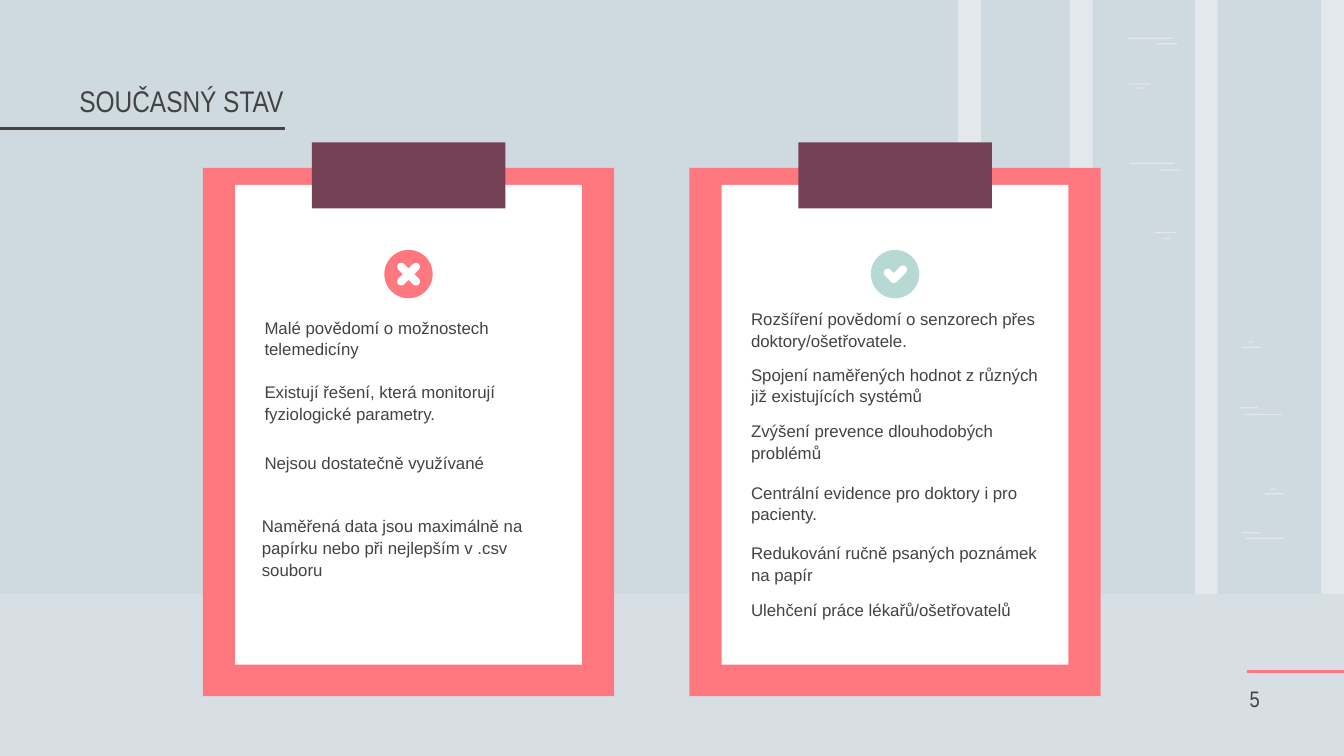
from dataclasses import dataclass
from math import atan2, degrees, hypot

from lxml import etree
from pptx import Presentation
from pptx import util as u
from pptx.dml.color import RGBColor
from pptx.enum import shapes, text
from pptx.oxml.ns import qn

PX = 4572  # EMU per px, 200 px to the inch
COLORS = {
    "sky": "CFD9E0",
    "white": "FFFFFF",
    "coral": "FF787F",
    "plum": "754255",
    "mint": "B7D9D3",
    "ink": "434343",
}
RECT = shapes.MSO_SHAPE.RECTANGLE
OVAL = shapes.MSO_SHAPE.OVAL
ROUND = shapes.MSO_SHAPE.ROUNDED_RECTANGLE


@dataclass(frozen=True)
class Note:
    top: int
    text: str
    shift: int = 0


@dataclass(frozen=True)
class Stroke:
    """Icon stroke, measured from the centre of the icon."""
    x1: int
    y1: int
    x2: int
    y2: int


@dataclass(frozen=True)
class Board:
    left: int
    icon_color: str
    strokes: tuple[Stroke, ...]
    notes: tuple[Note, ...]


TRUNKS = (1426, 1592, 1778, 1966)
# Bark marks: left, top, width
BARK = (
    (1678, 56, 66), (1720, 64, 32), (1682, 242, 66), (1726, 252, 32),
    (1680, 124, 32), (1692, 130, 12), (1718, 345, 32), (1730, 354, 12),
    (1854, 800, 58), (1848, 792, 28), (1852, 616, 56), (1844, 606, 28),
    (1882, 734, 28), (1890, 727, 10), (1848, 516, 28), (1856, 508, 10),
)
BOARDS = (
    Board(302, "coral", (Stroke(-11, -11, 11, 11), Stroke(-11, 11, 11, -11)), (
        Note(450, "Malé povědomí o možnostech telemedicíny"),
        Note(546, "Existují řešení, která monitorují fyziologické parametry."),
        Note(652, "Nejsou dostatečně využívané"),
        Note(746, "Naměřená data jsou maximálně na papírku nebo při nejlepším "
                  "v .csv souboru", -4),
    )),
    Board(1026, "mint", (Stroke(-11, -2, -2, 7), Stroke(-2, 7, 12, -7)), (
        Note(438, "Rozšíření povědomí o senzorech přes doktory/ošetřovatele."),
        Note(520, "Spojení naměřených hodnot z různých již existujících systémů"),
        Note(604, "Zvýšení prevence dlouhodobých problémů"),
        Note(696, "Centrální evidence pro doktory i pro pacienty."),
        Note(786, "Redukování ručně psaných poznámek na papír"),
        Note(870, "Ulehčení práce lékařů/ošetřovatelů"),
    )),
)


def px(n: float) -> u.Emu:
    return u.Emu(round(n * PX))


def rgb(name: str) -> RGBColor:
    return RGBColor.from_string(COLORS[name])


def add_block(s, kind, x: float, y: float, w: float, h: float, color: str,
              opacity: int = 100):
    sp = s.shapes.add_shape(kind, px(x), px(y), px(w), px(h))
    sp.shadow.inherit = False
    sp.fill.solid()
    sp.fill.fore_color.rgb = rgb(color)
    sp.line.fill.background()
    if opacity < 100:
        clr = sp._element.spPr.find(".//" + qn("a:srgbClr"))
        etree.SubElement(clr, qn("a:alpha"), val=str(opacity * 1000))
    return sp


def add_rule(s, x1: int, x2: int, y: int, color: str) -> None:
    line = s.shapes.add_connector(shapes.MSO_CONNECTOR.STRAIGHT,
                                  px(x1), px(y), px(x2), px(y))
    line.line.color.rgb = rgb(color)
    line.line.width = u.Pt(1.5)
    etree.SubElement(line._element.spPr, qn("a:effectLst"))


def set_text(sp, words: str, size: int, font: str, anchor, align,
             spacing: float = 1.0) -> None:
    tf = sp.text_frame
    tf.word_wrap = True
    tf.auto_size = text.MSO_AUTO_SIZE.NONE
    tf.vertical_anchor = anchor
    tf.margin_left = tf.margin_right = tf.margin_top = tf.margin_bottom = px(20)
    p = tf.paragraphs[0]
    p.text = words
    p.alignment = align
    p.line_spacing = spacing
    p.font.size = u.Pt(size)
    p.font.name = font
    p.font.color.rgb = rgb("ink")


def add_stroke(s, cx: int, cy: int, stroke: Stroke, thick: int = 12) -> None:
    dx, dy = stroke.x2 - stroke.x1, stroke.y2 - stroke.y1
    length = hypot(dx, dy) + thick
    mid_x = cx + (stroke.x1 + stroke.x2) / 2
    mid_y = cy + (stroke.y1 + stroke.y2) / 2
    sp = add_block(s, ROUND, mid_x - length / 2, mid_y - thick / 2,
                   length, thick, "white")
    sp.adjustments[0] = 0.5
    sp.rotation = degrees(atan2(dy, dx))


def add_board(s, board: Board) -> None:
    x = board.left
    add_block(s, RECT, x, 250, 612, 786, "coral")
    add_block(s, RECT, x + 48, 275, 516, 714, "white")
    add_block(s, RECT, x + 162, 212, 288, 98, "plum")
    cx, cy = x + 306, 408
    add_block(s, OVAL, cx - 36, cy - 36, 72, 72, board.icon_color)
    for stroke in board.strokes:
        add_stroke(s, cx, cy, stroke)
    for note in board.notes:
        sp = s.shapes.add_textbox(px(x + 72 + note.shift), px(note.top),
                                  px(468), px(104))
        set_text(sp, note.text, 9, "Arial", text.MSO_ANCHOR.TOP,
                 text.PP_ALIGN.LEFT, 1.07)


def main() -> None:
    prs = Presentation()
    prs.slide_width, prs.slide_height = px(2000), px(1125)
    s = prs.slides.add_slide(prs.slide_layouts[5])

    # Background: trunks, bark and ground
    s.background.fill.solid()
    s.background.fill.fore_color.rgb = rgb("sky")
    for x in TRUNKS:
        add_block(s, RECT, x, 0, 34, 884, "white", 40)
    for x, y, w in BARK:
        add_block(s, RECT, x, y, w, 2, "white", 40)
    add_block(s, RECT, 0, 884, 2000, 241, "white", 17)

    # Title and rules
    title = s.shapes.title
    title.left, title.top, title.width, title.height = map(px, (-4, 132, 446, 64))
    set_text(title, "SOUČASNÝ STAV", 16, "Arial Narrow",
             text.MSO_ANCHOR.BOTTOM, text.PP_ALIGN.RIGHT)
    add_rule(s, -4, 424, 191, "ink")
    add_rule(s, 1856, 2000, 999, "coral")

    # Clipboards
    for board in BOARDS:
        add_board(s, board)

    # Page number
    number = s.shapes.add_textbox(px(1840), px(994), px(70), px(86))
    set_text(number, "5", 12, "Arial Narrow",
             text.MSO_ANCHOR.BOTTOM, text.PP_ALIGN.LEFT)

    prs.save("out.pptx")


if __name__ == "__main__":
    main()
